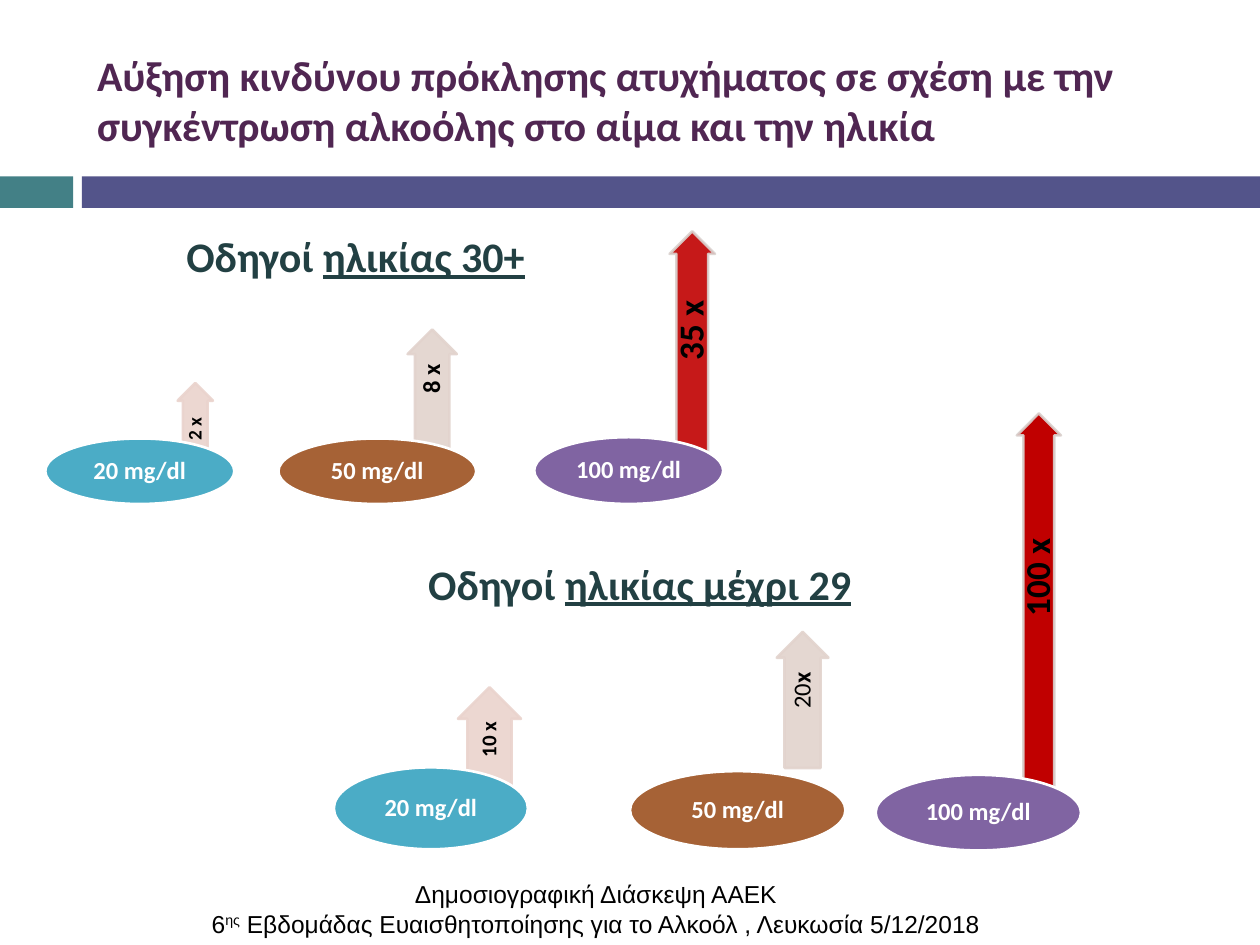
"""Build a slide on accident risk by blood alcohol level and driver age."""
from lxml import etree
from pptx import Presentation
from pptx import util as u
from pptx.dml.color import RGBColor
from pptx.enum import shapes, text
from pptx.oxml.ns import qn

TEAL = RGBColor(0x43, 0x80, 0x86)
INDIGO = RGBColor(0x53, 0x54, 0x8A)
PLUM = RGBColor(0x50, 0x26, 0x52)
DARK_TEAL = RGBColor(0x22, 0x40, 0x43)
BLUE = RGBColor(0x4B, 0xAC, 0xC6)
BROWN = RGBColor(0xA6, 0x62, 0x36)
PURPLE = RGBColor(0x80, 0x64, 0xA2)
ROSE = RGBColor(0xEA, 0xD3, 0xCD)
SAND = RGBColor(0xE2, 0xD3, 0xCD)
STONE = RGBColor(0xDA, 0xD2, 0xCF)
RED = RGBColor(0xC0, 0x00, 0x00)
WHITE = RGBColor(0xFF, 0xFF, 0xFF)
BLACK = RGBColor(0x00, 0x00, 0x00)

COLS, ROWS = 100, 75
LEVELS = (("20 mg/dl", BLUE), ("50 mg/dl", BROWN), ("100 mg/dl", PURPLE))
YOUNG_OVALS = ((26.5, 60.9, 15.4, 6.5), (50, 61.2, 17.1, 6.2), (69.5, 61.5, 16.3, 6))
OLDER_OVALS = ((3.6, 34.8, 15, 5.2), (22.1, 34.8, 15.7, 5.2), (42.4, 34.7, 15, 5.3))
OLDER_ARROWS = (
    dict(box=(15.5, 30.4, 8.6, 2.8), runs=["2 x"], size=11, fill=ROSE, line=ROSE),
    dict(box=(34.3, 26.15, 10.2, 3.9), runs=["8 x"], size=14, fill=SAND, line=SAND, lead=0.9),
    dict(box=(54.95, 18.35, 19.7, 3.6), runs=["35 x"], size=20, fill=RED, line=STONE),
)
YOUNG_ARROWS = (
    dict(box=(38.85, 54.55, 8.9, 5), runs=["10 x"], size=12, fill=ROSE, line=ROSE),
    dict(box=(63.7, 50.15, 10.8, 4.1), runs=[("20", dict(bold=False)), "x"],
         size=14, fill=SAND, line=SAND),
    dict(box=(82.45, 32.8, 33.5, 3.5), runs=["100 x"], size=20, fill=RED, line=STONE, alpha=100),
)


def write(p, runs, size=14, font="Calibri", color=BLACK, bold=True, align=None, spacing=None):
    """Add runs to a paragraph; a run is text or a (text, format) pair."""
    p.alignment, p.line_spacing = align, spacing
    for item in runs:
        words, extra = (item, {}) if isinstance(item, str) else item
        r = p.add_run()
        r.text = words
        f = r.font
        f.name, f.size, f.color.rgb = font, u.Pt(size), color
        f.bold, f.underline = extra.get("bold", bold), extra.get("underline")
        if "baseline" in extra:
            r._r.get_or_add_rPr().set("baseline", str(extra["baseline"] * 1000))


def set_alpha(fill_parent, percent):
    """Set the opacity of the solid fill directly below an element."""
    color = fill_parent.find(qn("a:solidFill"))[0]
    etree.SubElement(color, qn("a:alpha")).set("val", str(percent * 1000))


class Deck:
    """Hold the style, the grid and the current slide."""

    def __init__(self):
        """Start a presentation with one title-only slide."""
        self.prs = Presentation()
        self.prs.slide_width, self.prs.slide_height = u.Inches(10), u.Inches(7.5)
        self.s = self.prs.slides.add_slide(self.prs.slide_layouts[5])

    def grid(self, x, y, w, h):
        """Turn columns and rows into slide lengths."""
        col, row = self.prs.slide_width / COLS, self.prs.slide_height / ROWS
        return [round(v) for v in (x * col, y * row, w * col, h * row)]

    def shape(self, parent, kind, box, fill, line=None):
        """Add a preset shape without a shadow."""
        sp = parent.shapes.add_shape(kind, *self.grid(*box))
        sp.shadow.inherit = False
        sp.fill.solid()
        sp.fill.fore_color.rgb = fill
        if line is None:
            sp.line.fill.background()
        else:
            sp.line.color.rgb, sp.line.width = line, u.Pt(1.5)
        return sp

    def frame(self, sp, insets=None, anchor=text.MSO_ANCHOR.MIDDLE, wrap=True):
        """Format a text frame and return it."""
        tf = sp.text_frame
        tf.word_wrap, tf.vertical_anchor = wrap, anchor
        if insets:
            tf.margin_left, tf.margin_top, tf.margin_right, tf.margin_bottom = map(u.Inches, insets)
        return tf

    def title(self, box, words):
        """Fill the title placeholder."""
        sp = self.s.shapes.title
        sp.left, sp.top, sp.width, sp.height = self.grid(*box)
        write(self.frame(sp).paragraphs[0], [words], 24, color=PLUM, align=text.PP_ALIGN.LEFT)

    def text(self, box, paragraphs, wrap=True, **style):
        """Add a text box with one list of runs per paragraph."""
        sp = self.s.shapes.add_textbox(*self.grid(*box))
        tf = self.frame(sp, anchor=text.MSO_ANCHOR.TOP, wrap=wrap)
        for i, runs in enumerate(paragraphs):
            write(tf.add_paragraph() if i else tf.paragraphs[0], runs, **style)

    def oval(self, parent, box, label, fill):
        """Add an alcohol level."""
        sp = self.shape(parent, shapes.MSO_SHAPE.OVAL, box, fill, WHITE)
        tf = self.frame(sp, (0.01,) * 4)
        write(tf.paragraphs[0], [label], color=WHITE, align=text.PP_ALIGN.CENTER, spacing=0.9)

    def arrow(self, parent, box, runs, size, fill, line, alpha=90, lead=0):
        """Add an upward arrow from its centre, top, length and thickness."""
        x, top, length, thick = box
        sp = self.shape(parent, shapes.MSO_SHAPE.RIGHT_ARROW,
                        (x - length / 2, top + (length - thick) / 2, length, thick), fill, line)
        sp.rotation = 270
        sp.adjustments[0], sp.adjustments[1] = 0.7, 0.5
        set_alpha(sp.line._get_or_add_ln(), 90)
        if alpha < 100:
            set_alpha(sp._element.spPr, alpha)
        head, depth = 0.35 * thick, 0.7 * thick
        span = 0.75 * length - head
        label = parent.shapes.add_textbox(
            *self.grid(x - span / 2, top + head + (span - depth) / 2, span, depth))
        label.rotation = 270
        tf = self.frame(label, (size * 0.003 + lead / 10, 0.01, size * 0.0015, 0.01))
        write(tf.paragraphs[0], runs, size, align=text.PP_ALIGN.CENTER, spacing=0.9)

    def age_group(self, arrows, ovals):
        """Group each arrow with the alcohol level below it."""
        group = self.s.shapes.add_group_shape()
        for arrow, box, (label, fill) in zip(arrows, ovals, LEVELS):
            self.arrow(group, **arrow)
            self.oval(group, box, label, fill)


def main():
    """Build and save the slide."""
    deck = Deck()
    for box, fill in (((0, 14, 5.8, 2.5), TEAL), ((6.5, 14, 93.5, 2.5), INDIGO)):
        deck.shape(deck.s, shapes.MSO_SHAPE.RECTANGLE, box, fill)
    deck.title((6.7, 2.5, 89.2, 10.8),
               "Αύξηση κινδύνου πρόκλησης ατυχήματος σε σχέση με την "
               "συγκέντρωση αλκοόλης στο αίμα και την ηλικία")
    deck.age_group(OLDER_ARROWS, OLDER_OVALS)
    deck.age_group(YOUNG_ARROWS, YOUNG_OVALS)
    for box, age in (((13.8, 17.8, 29.8, 5), "ηλικίας 30+"),
                     ((33, 43.8, 35.9, 5), "ηλικίας μέχρι 29")):
        deck.text(box, [["Οδηγοί ", (age, dict(underline=True))]],
                  wrap=False, size=24, color=DARK_TEAL)
    deck.text((8.7, 69.3, 77.2, 8.1),
              [["Δημοσιογραφική Διάσκεψη ΑΑΕΚ"],
               ["6", ("ης", dict(baseline=30)),
                " Εβδομάδας Ευαισθητοποίησης για το Αλκοόλ , Λευκωσία 5/12/2018"]],
              font="Arial", bold=False, align=text.PP_ALIGN.CENTER)
    deck.prs.save("out.pptx")


if __name__ == "__main__":
    main()
